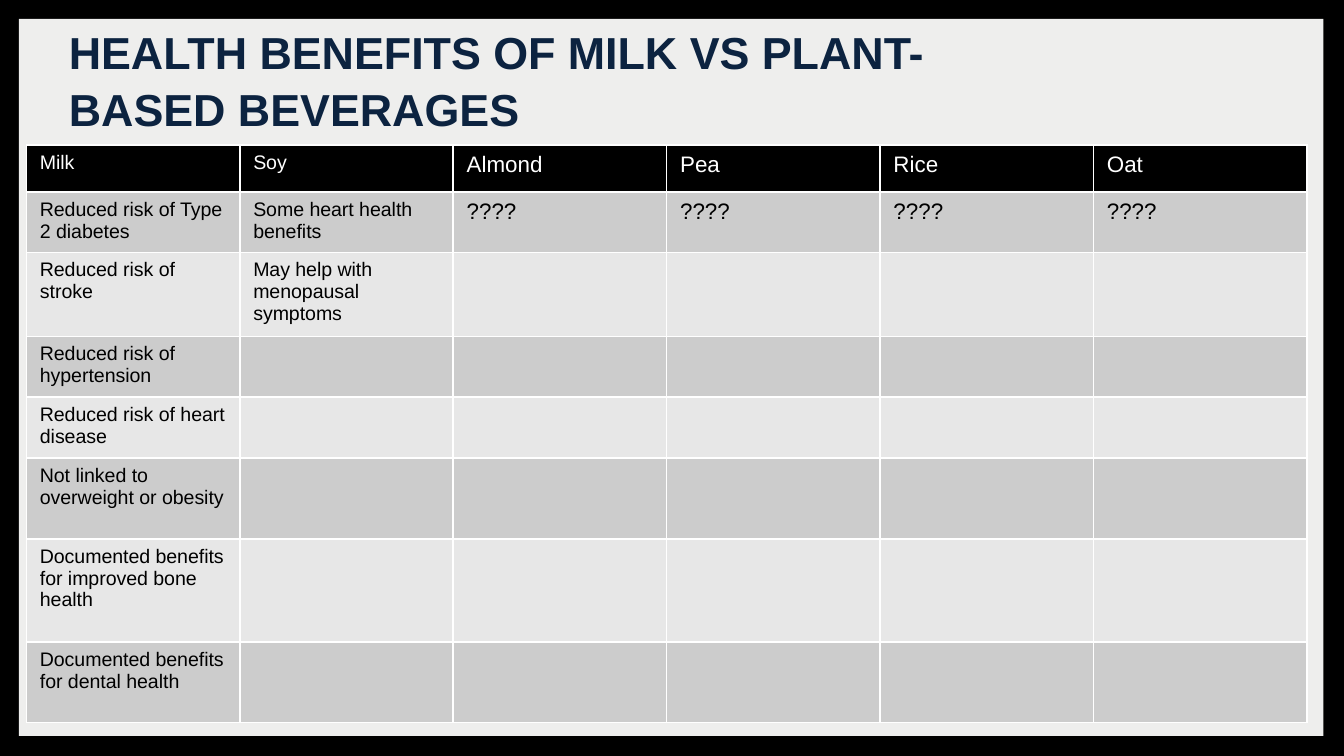
from lxml import etree
from pptx import Presentation, util as u
from pptx.dml.color import RGBColor
from pptx.enum import shapes, text
from pptx.oxml.ns import qn

HEADS = ["Milk", "Soy", "Almond", "Pea", "Rice", "Oat"]
MILK = [
    "Reduced risk of Type 2 diabetes",
    "Reduced risk of stroke",
    "Reduced risk of hypertension",
    "Reduced risk of heart disease",
    "Not linked to overweight or obesity",
    "Documented benefits for improved bone health",
    "Documented benefits for dental health",
]
SOY = ["Some heart health benefits", "May help with menopausal symptoms"]
HEIGHTS = [0.89, 1.14, 1.59, 1.15, 1.15, 1.53, 1.95, 1.52]


def color(code):
    return RGBColor.from_string(code)


def border(cell, code, width):
    """Draw the same line on all four sides of a cell."""
    props = cell._tc.get_or_add_tcPr()
    for side in ("lnL", "lnR", "lnT", "lnB"):
        line = etree.SubElement(props, qn("a:" + side), w=str(u.Pt(width)))
        fill = etree.SubElement(line, qn("a:solidFill"))
        etree.SubElement(fill, qn("a:srgbClr"), val=code)


class Deck:
    font = "Arial"
    black, white, navy = "000000", "FFFFFF", "0C2340"
    panel = "EEEEED"
    bands = ("CCCCCC", "E7E7E7")

    def __init__(self, width, height):
        self.file = Presentation()
        self.file.slide_width = u.Cm(width)
        self.file.slide_height = u.Cm(height)

    def page(self):
        self.slide = self.file.slides.add_slide(self.file.slide_layouts[5])
        fill = self.slide.background.fill
        fill.solid()
        fill.fore_color.rgb = color(self.black)

    def style(self, para, size, code, bold=False):
        para.font.name = self.font
        para.font.size = u.Pt(size)
        para.font.bold = bold
        para.font.color.rgb = color(code)

    def back(self, *box):
        """Add the pale panel behind everything else."""
        rect = self.slide.shapes.add_shape(
            shapes.MSO_SHAPE.RECTANGLE, *map(u.Cm, box))
        rect.shadow.inherit = False
        rect.fill.solid()
        rect.fill.fore_color.rgb = color(self.panel)
        rect.line.fill.background()
        self.slide.shapes._spTree.insert(2, rect._element)

    def title(self, words, *box):
        shape = self.slide.shapes.title
        shape.left, shape.top, shape.width, shape.height = map(u.Cm, box)
        frame = shape.text_frame
        frame.text = words
        frame.word_wrap = True
        frame.auto_size = text.MSO_AUTO_SIZE.NONE
        frame.vertical_anchor = text.MSO_ANCHOR.MIDDLE
        frame.margin_left = frame.margin_right = 0
        frame.margin_top = frame.margin_bottom = 0
        para = frame.paragraphs[0]
        para.alignment = text.PP_ALIGN.LEFT
        para.line_spacing = 1.05
        self.style(para, 24, self.navy, True)

    def table(self, rows, heights, left, top, width):
        count = len(rows[0])
        grid = self.slide.shapes.add_table(
            len(rows), count, u.Cm(left), u.Cm(top),
            u.Cm(width), u.Cm(sum(heights))).table
        for col in grid.columns:
            col.width = u.Cm(width / count)
        for r, (row, height) in enumerate(zip(rows, heights)):
            grid.rows[r].height = u.Cm(height)
            for c, words in enumerate(row):
                cell = grid.cell(r, c)
                border(cell, self.white, 1)
                cell.fill.solid()
                shade = self.bands[(r - 1) % 2] if r else self.black
                cell.fill.fore_color.rgb = color(shade)
                cell.text = words
                self.style(cell.text_frame.paragraphs[0],
                           10.5 if c < 2 else 12,
                           self.black if r else self.white)

    def save(self):
        self.file.save("out.pptx")


def main():
    rows = [HEADS]
    for i, milk in enumerate(MILK):
        soy = SOY[i] if i < len(SOY) else ""
        rest = "" if i else "????"
        rows.append([milk, soy] + [rest] * 4)

    deck = Deck(25.4, 14.29)
    deck.page()
    deck.back(0.36, 0.36, 24.65, 13.55)
    deck.title("HEALTH BENEFITS OF MILK VS PLANT-BASED BEVERAGES",
               1.3, 0.43, 18.8, 2.11)
    deck.table(rows, HEIGHTS, 0.5, 2.74, 24.2)
    deck.save()


if __name__ == "__main__":
    main()
